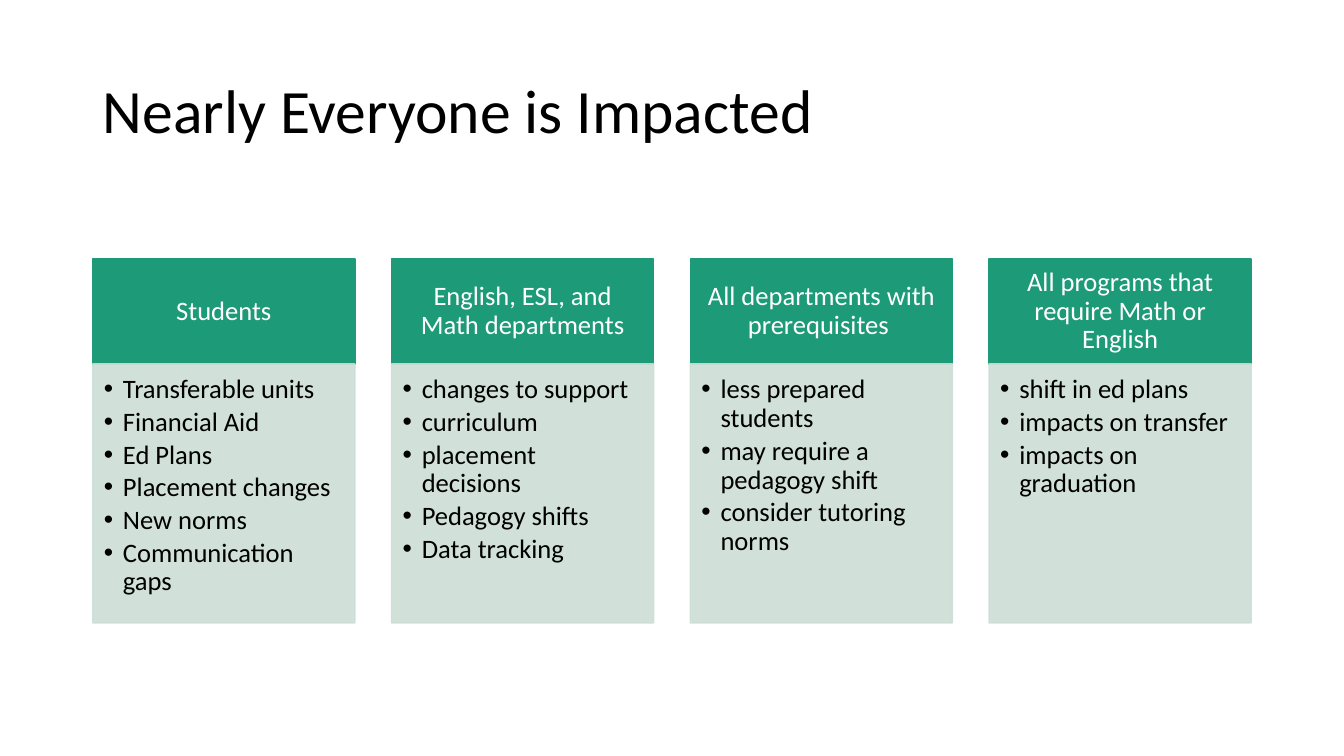
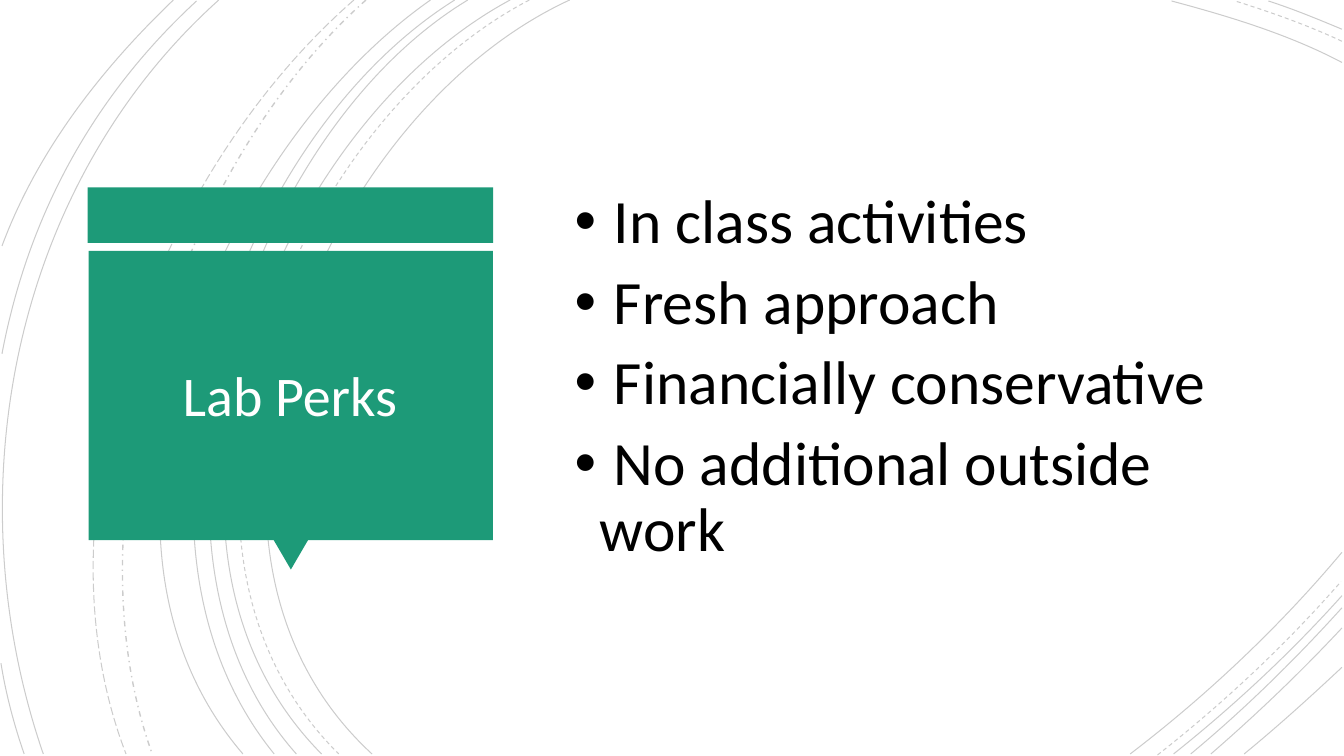
from pptx import Presentation, util as u
from pptx.dml.color import RGBColor
from pptx.enum import dml, shapes, text
from pptx.oxml.ns import qn
from lxml import etree

GREEN = RGBColor(0x1D, 0x9A, 0x78)
PALE = RGBColor(0xCD, 0xDE, 0xD6)
BLACK = RGBColor(0, 0, 0)
WHITE = RGBColor(255, 255, 255)
FACE = "Calibri"
RECT = shapes.MSO_SHAPE.RECTANGLE
MID = text.MSO_ANCHOR.MIDDLE
LEFT, CENTER = text.PP_ALIGN.LEFT, text.PP_ALIGN.CENTER


def box(slide, kind, spot, fill):
    shape = slide.shapes.add_shape(kind, *[u.Inches(v) for v in spot])
    shape.shadow.inherit = False
    shape.fill.solid()
    shape.fill.fore_color.rgb = fill
    shape.line.fill.background()
    return shape


def write(frame, lines, size, color, align=LEFT, indent=0, before=0, after=0):
    frame.word_wrap = True
    frame.auto_size = text.MSO_AUTO_SIZE.NONE
    for i, line in enumerate(lines):
        para = frame.paragraphs[0] if i == 0 else frame.add_paragraph()
        para.text = line
        para.alignment = align
        para.line_spacing = 0.9
        para.space_before, para.space_after = u.Pt(before), u.Pt(after)
        if indent:
            props = para._p.get_or_add_pPr()
            props.set("marL", str(u.Inches(indent)))
            props.set("indent", str(-u.Inches(indent)))
            etree.SubElement(props, qn("a:buFont")).set("typeface", "Arial")
            etree.SubElement(props, qn("a:buChar")).set("char", "•")
        para.font.name, para.font.size = FACE, u.Pt(size)
        para.font.color.rgb = color


deck = Presentation()
deck.slide_width, deck.slide_height = u.Inches(13.33), u.Inches(7.5)
first = deck.slides.add_slide(deck.slide_layouts[5])
second = deck.slides.add_slide(deck.slide_layouts[1])
veils = []

cards = [
    ("Students", ["Transferable units", "Financial Aid", "Ed Plans",
                  "Placement changes", "New norms", "Communication gaps"]),
    ("English, ESL, and Math departments",
     ["changes to support", "curriculum", "placement decisions",
      "Pedagogy shifts", "Data tracking"]),
    ("All departments with prerequisites ",
     ["less prepared students", "may require a pedagogy shift",
      "consider tutoring norms"]),
    ("All programs that require Math or English",
     ["shift in ed plans", "impacts on transfer", "impacts on graduation"]),
]
edge, last, wide = 0.92, 9.81, 2.6
pitch = (last - edge) / (len(cards) - 1)
for col, (name, items) in enumerate(cards):
    x = edge + col * pitch
    head = box(first, RECT, (x, 2.57, wide, 1.04), GREEN)
    body = box(first, RECT, (x, 3.61, wide, 2.57), PALE)
    for part, color, pads, anchor in [
        (head, GREEN, (0.15, 0.08, 0.15, 0.08), MID),
        (body, PALE, (0.11, 0.12, 0.15, 0.17), text.MSO_ANCHOR.TOP),
    ]:
        part.line.color.rgb = color
        part.line.width = u.Pt(1)
        frame = part.text_frame
        frame.vertical_anchor = anchor
        (frame.margin_left, frame.margin_top, frame.margin_right,
         frame.margin_bottom) = [u.Inches(v) for v in pads]
    write(head.text_frame, [name], 19, WHITE, CENTER)
    write(body.text_frame, items, 19, BLACK, indent=0.19, after=2.8)
    veils.append((body, 90))

SOLID, DASH = dml.MSO_LINE.SOLID, dml.MSO_LINE.DASH
arcs = [
    (SOLID, 0.75, [
        (5.65, 0, 3.15, 1.15, 1.43, 5.4, 3.69, 7.48),
        (13.31, 0.62, 12.78, 0.34, 12.18, 0.16, 11.62, 0.01),
        (11.21, 7.48, 11.97, 6.9, 12.69, 6.22, 13.31, 5.48),
        (5.06, 0, 2.7, 1.27, 1.1, 5.37, 3.19, 7.48),
        (13.31, 0.29, 13.07, 0.19, 12.83, 0.09, 12.58, 0.01),
        (11.64, 7.48, 12.23, 7.01, 12.8, 6.48, 13.31, 5.91),
        (4.64, 0, 2.44, 1.33, 1.1, 5.41, 2.94, 7.48),
        (11.81, 7.48, 12.34, 7.04, 12.84, 6.55, 13.31, 6.03),
        (4.51, 0, 2.31, 1.38, 0.97, 5.33, 2.72, 7.48),
        (12.01, 7.48, 12.46, 7.09, 12.9, 6.67, 13.31, 6.23),
        (4.27, 0, 2.17, 1.47, 0.53, 5.29, 2.41, 7.48),
        (12.34, 7.48, 12.67, 7.21, 12.99, 6.92, 13.31, 6.62),
        (2.17, 0, 0.11, 1.85, -0.46, 4.9, 0.43, 7.48),
        (1.95, 0.01, 0.92, 0.96, 0.28, 2.14, 0.02, 3.51),
        (0.01, 6.58, 0.06, 6.89, 0.14, 7.19, 0.24, 7.48),
        (1.72, 0, 1, 0.69, 0.37, 1.5, 0.02, 2.44),
    ]),
    (DASH, 0.75, [
        (5.25, 0, 2.85, 1.25, 1.23, 5.37, 3.36, 7.48),
        (13.31, 0.41, 12.97, 0.25, 12.6, 0.12, 12.25, 0.01),
        (11.48, 7.49, 12.13, 6.98, 12.75, 6.4, 13.3, 5.77),
    ]),
    (dml.MSO_LINE.DASH_DOT, 1, [(3.63, 0, 1.76, 1.66, 0.65, 5.09, 1.51, 7.48)]),
    (dml.MSO_LINE.LONG_DASH, 0.75,
     [(3.51, 0, 1.57, 1.69, 0.29, 4.99, 1.25, 7.48)]),
]
for dash, width, curves in arcs:
    for curve in curves:
        start, *rest = [(u.Inches(a), u.Inches(b))
                        for a, b in zip(curve[::2], curve[1::2])]
        pen = second.shapes.build_freeform(*start)
        pen.add_line_segments(rest, close=False)
        arc = pen.convert_to_shape()
        track = next(arc.element.iter(qn("a:path")))
        bend = etree.SubElement(track, qn("a:cubicBezTo"))
        for leg in track.findall(qn("a:lnTo")):
            bend.append(leg[0])
            track.remove(leg)
        arc.shadow.inherit = False
        arc.fill.background()
        arc.line.color.rgb = BLACK
        arc.line.width = u.Pt(width)
        arc.line.dash_style = dash
        veils.append((arc, 20))

box(second, RECT, (0.87, 1.86, 4.02, 0.55), GREEN)
tip = box(second, shapes.MSO_SHAPE.ISOSCELES_TRIANGLE, (2.71, 5.35, 0.35, 0.3), GREEN)
tip.rotation = 180
box(second, RECT, (0.88, 2.49, 4.01, 2.87), GREEN)

perks = [" In class activities", " Fresh approach",
         " Financially conservative", " No additional outside work"]
holders = [
    (first.shapes.title, (edge, 0.4, 11.5, 1.45),
     ["Nearly Everyone is Impacted"], 44, BLACK, LEFT, 0, 0),
    (second.shapes.title, (0.99, 2.64, 3.77, 2.62),
     ["Lab Perks"], 40, WHITE, CENTER, 0, 0),
    (second.placeholders[1], (5.6, 0.88, 6.87, 5.74),
     perks, 44, BLACK, LEFT, 0.25, 10),
]
for holder, spot, lines, size, color, align, indent, before in holders:
    holder.left, holder.top, holder.width, holder.height = [u.Inches(v) for v in spot]
    holder.text_frame.vertical_anchor = MID
    write(holder.text_frame, lines, size, color, align, indent, before)
    holder.element.getparent().append(holder.element)

for shape, share in veils:
    for tint in shape.element.spPr.iter(qn("a:srgbClr")):
        etree.SubElement(tint, qn("a:alpha")).set("val", str(share * 1000))

deck.save("out.pptx")
